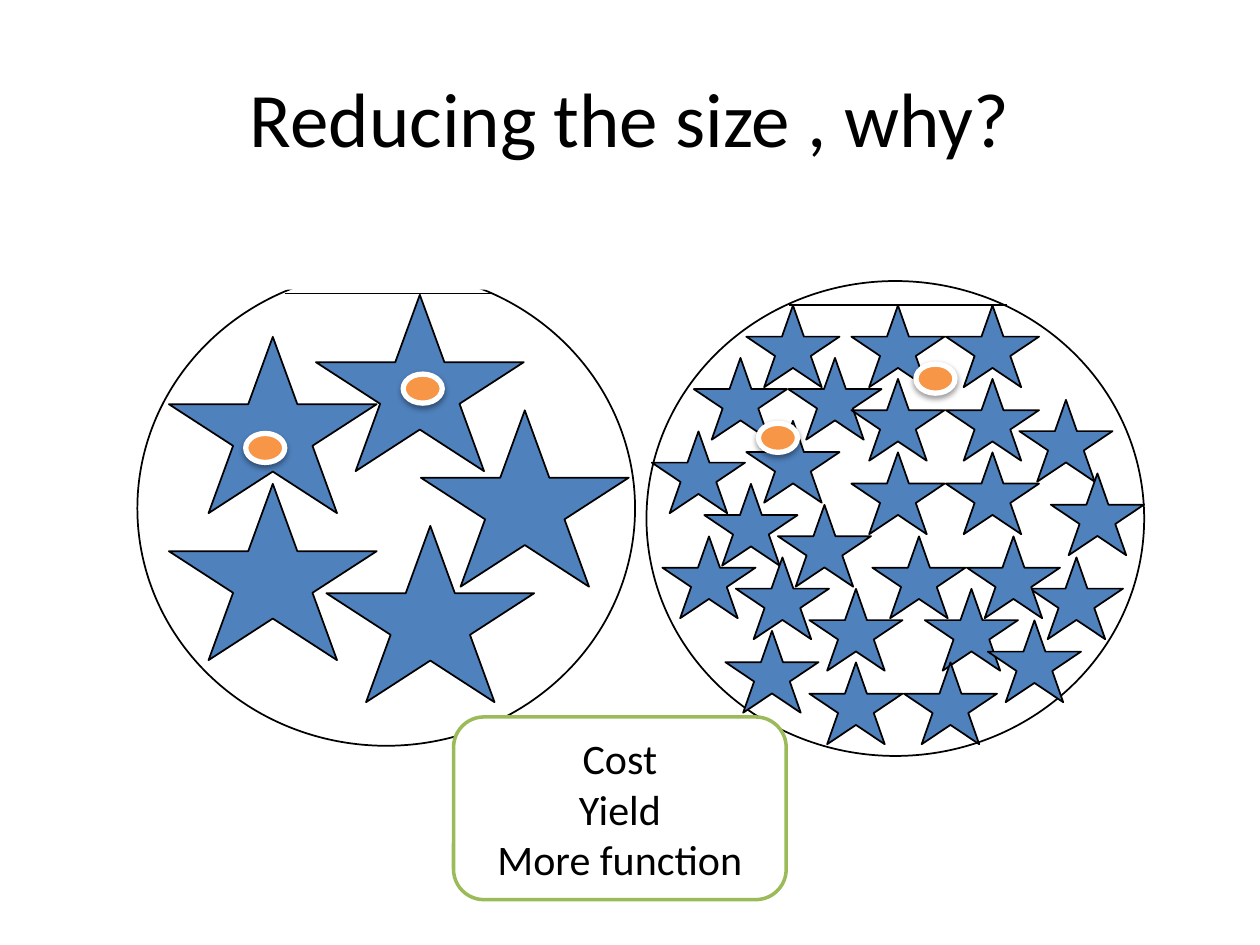
from lxml import etree
from pptx import Presentation
from pptx.dml.color import RGBColor
from pptx.enum.shapes import MSO_CONNECTOR, MSO_SHAPE
from pptx.enum.text import MSO_ANCHOR, PP_ALIGN
from pptx.oxml import parse_xml
from pptx.oxml.ns import qn
from pptx.util import Pt

OVAL, RECT = MSO_SHAPE.OVAL, MSO_SHAPE.RECTANGLE
STAR, ROUND = MSO_SHAPE.STAR_5_POINT, MSO_SHAPE.ROUNDED_RECTANGLE
LINE, MID, MIDDLE = MSO_CONNECTOR.STRAIGHT, PP_ALIGN.CENTER, MSO_ANCHOR.MIDDLE
FONT = "Calibri"
BLACK, WHITE, BLUE = "000000", "FFFFFF", "4F81BD"
ORANGE, GREEN = "F79646", "9BBB59"

# Content
TITLE = "Reducing the size , why?"
GOALS = ["Cost", "Yield", "More function"]

# Places in points; stars sit on a 6 pt grid, shifted by NUDGE
NUDGE = 0.5
WAFERS = [(369.4, 160.6), (78.5, 154.8)]
WAFER = (284.4, 271.4)
BIG = (118.8, 100.8)
BIG_AT = [(186, 300), (96, 276), (240, 234), (96, 192), (180, 168)]
SMALL = (53.3, 46.8)
SMALL_AT = [
    (426, 174), (486, 174), (540, 174), (396, 204), (450, 204), (486, 216),
    (540, 216), (372, 246), (582, 228), (426, 240), (486, 258), (402, 276),
    (540, 258), (588, 318), (600, 270), (444, 288), (378, 306), (420, 318),
    (498, 306), (552, 306), (462, 336), (528, 336), (414, 360), (462, 378),
    (516, 378), (564, 354),
]
FLATS = [(162.7, 281.5, 167.8), (450.7, 575.3, 174.3)]
DOT = (22.3, 16.6)
DOTS = [(140.4, 247.7), (230.4, 213.8), (433.4, 241.9), (523.4, 208.1)]
SHADOW = """<a:effectLst xmlns:a="http://schemas.openxmlformats.org/drawingml/2006/main">
<a:outerShdw blurRad="40000" dist="20000" dir="5400000" rotWithShape="0">
<a:srgbClr val="000000"><a:alpha val="38000"/></a:srgbClr></a:outerShdw></a:effectLst>"""

prs = Presentation()
prs.slide_width, prs.slide_height = Pt(720), Pt(540)
slide = prs.slides.add_slide(prs.slide_layouts[6])
shapes = slide.shapes


def color(code):
    return RGBColor.from_string(code)


def draw(kind, at, size, fill=None, line=None, width=1):
    shape = shapes.add_shape(kind, *map(Pt, at + size))
    shape.shadow.inherit = False
    if fill:
        shape.fill.solid()
        shape.fill.fore_color.rgb = color(fill)
    else:
        shape.fill.background()
    if line:
        shape.line.color.rgb = color(line)
        shape.line.width = Pt(width)
    else:
        shape.line.fill.background()
    return shape


def write(shape, lines, size):
    frame = shape.text_frame
    frame.word_wrap = True
    frame.vertical_anchor = MIDDLE
    for i, text in enumerate(lines):
        para = frame.add_paragraph() if i else frame.paragraphs[0]
        para.alignment = MID
        run = para.add_run()
        run.text = text
        run.font.name, run.font.size = FONT, Pt(size)
        run.font.color.rgb = color(BLACK)


# Wafers, and the patch that hides the top of the left one
for at in WAFERS:
    draw(OVAL, at, WAFER, line=BLACK)
draw(RECT, (144, 120.2), (153.4, 45.4), WHITE)

# Chips
for size, spots in ((BIG, BIG_AT), (SMALL, SMALL_AT)):
    for x, y in spots:
        draw(STAR, (x + NUDGE, y + NUDGE), size, BLUE, BLACK)

# Flat edges
for left, right, y in FLATS:
    flat = shapes.add_connector(LINE, Pt(left), Pt(y), Pt(right), Pt(y))
    flat.line.color.rgb = color(BLACK)
    flat.line.width = Pt(1)
    etree.SubElement(flat._element.spPr, qn("a:effectLst"))

# Defects
for at in DOTS:
    dot = draw(OVAL, at, DOT, ORANGE, WHITE, 3)
    props = dot._element.spPr
    props.replace(props.find(qn("a:effectLst")), parse_xml(SHADOW))

# Goals and title
write(draw(ROUND, (259.2, 409.7), (190.1, 104.4), WHITE, GREEN, 2), GOALS, 24)
write(shapes.add_textbox(Pt(36), Pt(21.6), Pt(648), Pt(90)), [TITLE], 44)

prs.save("out.pptx")
